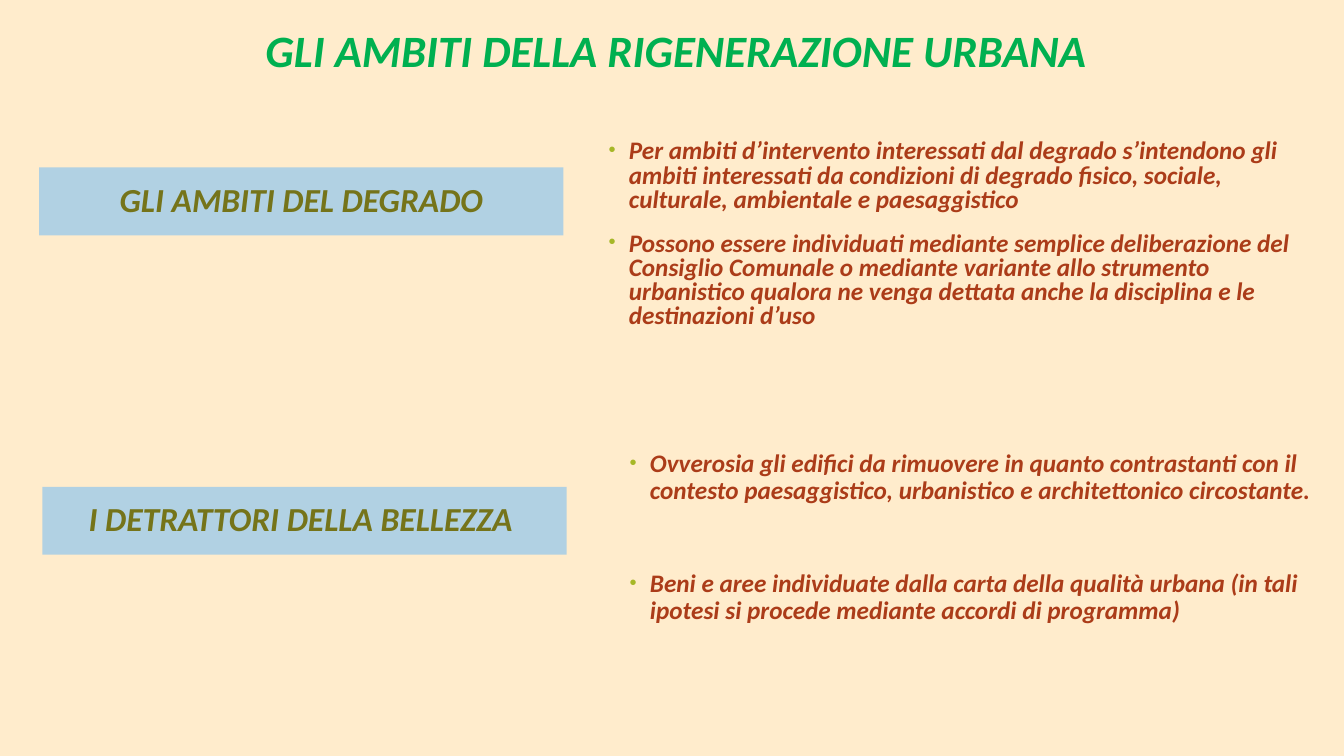
from lxml.etree import SubElement
from pptx import Presentation
from pptx.dml.color import RGBColor
from pptx.enum.shapes import MSO_SHAPE
from pptx.enum.text import MSO_ANCHOR, PP_ALIGN
from pptx.oxml.ns import qn
from pptx.util import Cm, Pt

COLORS = {
    "background": "FFECCC",
    "title": "00B050",
    "band": "B1D1E3",
    "heading": "75741A",
    "body": "AB3C19",
    "bullet": "A6B727",
}
FONT = "Calibri"


def rgb(name):
    return RGBColor.from_string(COLORS[name])


def add_run(p, text, size, color):
    r = p.add_run()
    r.text = text
    r.font.name = FONT
    r.font.size = Pt(size)
    r.font.bold = True
    r.font.italic = True
    r.font.color.rgb = rgb(color)


def fill_centered(sp, text, size, color):
    tf = sp.text_frame
    tf.word_wrap = True
    tf.vertical_anchor = MSO_ANCHOR.MIDDLE
    p = tf.paragraphs[0]
    p.alignment = PP_ALIGN.CENTER
    p.line_spacing = 0.9
    add_run(p, text, size, color)


def add_title(s, text):
    sp = s.shapes.add_textbox(Cm(3.33), Cm(0.48), Cm(27.43), Cm(1.7))
    fill_centered(sp, text, 32, "title")


def add_heading(s, left, top, text):
    sp = s.shapes.add_shape(MSO_SHAPE.RECTANGLE, Cm(left), Cm(top), Cm(13.21), Cm(1.71))
    sp.shadow.inherit = False
    sp.fill.solid()
    sp.fill.fore_color.rgb = rgb("band")
    sp.line.fill.background()
    fill_centered(sp, text, 24, "heading")


def set_bullet(p):
    pPr = p._p.get_or_add_pPr()
    pPr.set("marL", str(Cm(0.64)))
    pPr.set("indent", str(-Cm(0.51)))
    color = SubElement(pPr, qn("a:buClr"))
    SubElement(color, qn("a:srgbClr"), val=COLORS["bullet"])
    SubElement(pPr, qn("a:buSzPct"), val="80000")
    SubElement(pPr, qn("a:buFont"), typeface="Arial")
    SubElement(pPr, qn("a:buChar"), char="•")


def add_bullets(s, box, inset, line_spacing, gap, texts):
    sp = s.shapes.add_textbox(*[Cm(v) for v in box])
    tf = sp.text_frame
    tf.word_wrap = True
    tf.margin_top = Cm(inset)
    for i, text in enumerate(texts):
        p = tf.add_paragraph() if i else tf.paragraphs[0]
        p.line_spacing = line_spacing
        p.space_before = Pt(gap if i else 0)
        set_bullet(p)
        add_run(p, text, 18, "body")


def main():
    prs = Presentation()
    prs.slide_width = Cm(33.87)
    prs.slide_height = Cm(19.05)
    s = prs.slides.add_slide(prs.slide_layouts[6])
    s.background.fill.solid()
    s.background.fill.fore_color.rgb = rgb("background")

    add_title(s, "GLI AMBITI DELLA RIGENERAZIONE URBANA")
    add_heading(s, 0.99, 4.22, "GLI AMBITI DEL DEGRADO")
    add_bullets(s, (14.96, 2.13, 18.16, 6.76), 1.41, 0.8, 14, [
        "Per ambiti d’intervento interessati dal degrado s’intendono gli ambiti "
        "interessati da condizioni di degrado fisico, sociale, culturale, "
        "ambientale e paesaggistico",
        "Possono essere individuati mediante semplice deliberazione del Consiglio "
        "Comunale o mediante variante allo strumento urbanistico qualora ne venga "
        "dettata anche la disciplina e le destinazioni d’uso",
    ])
    add_heading(s, 1.07, 12.27, "I DETRATTORI DELLA BELLEZZA ")
    add_bullets(s, (15.49, 9.88, 17.88, 7.62), 1.48, 0.9, 46.6, [
        "Ovverosia gli edifici da rimuovere in quanto contrastanti con il contesto "
        "paesaggistico, urbanistico e architettonico circostante.",
        "Beni e aree individuate dalla carta della qualità urbana (in tali ipotesi "
        "si procede mediante accordi di programma)",
    ])
    prs.save("out.pptx")


if __name__ == "__main__":
    main()
